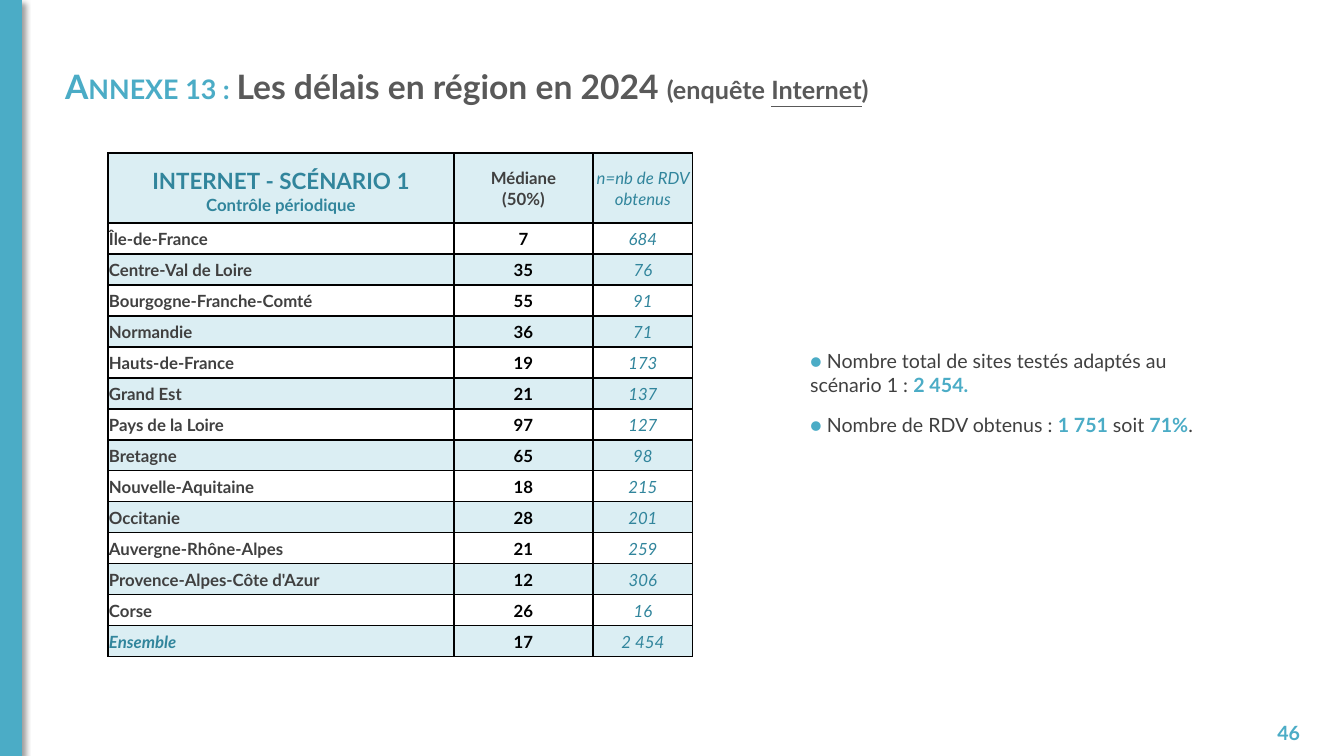
"""Build the slide of regional appointment delays for 2024."""
import dataclasses
import typing

import lxml.etree
import pptx
import pptx.dml.color
import pptx.enum.shapes
import pptx.enum.text
import pptx.oxml
import pptx.oxml.ns
import pptx.util

ALIGN = pptx.enum.text.PP_ALIGN
MIDDLE = pptx.enum.text.MSO_ANCHOR.MIDDLE
NS = 'xmlns:a="http://schemas.openxmlformats.org/drawingml/2006/main"'


@dataclasses.dataclass(frozen=True)
class Theme:
    font: str = "Lato"
    accent: str = "4BACC6"
    teal: str = "31859C"
    head: str = "595959"
    body: str = "404040"
    black: str = "000000"
    title: int = 24
    lead: int = 20
    sub: int = 18
    note: int = 14
    cell: int = 12


THEME = Theme()


@dataclasses.dataclass(frozen=True)
class Box:
    left: int
    top: int
    width: int
    height: int


@dataclasses.dataclass(frozen=True)
class Span:
    text: str
    color: str
    size: typing.Optional[int] = None
    bold: typing.Optional[bool] = None
    under: bool = False
    small: bool = False


@dataclasses.dataclass(frozen=True)
class Line:
    spans: tuple[Span, ...]
    size: int
    bold: bool = False
    italic: bool = False
    align: ALIGN = ALIGN.LEFT
    after: int = 0


@dataclasses.dataclass(frozen=True)
class Region:
    name: str
    median: str
    count: str


WIDE, HIGH = 1344, 756
BAR = Box(0, 0, 22, HIGH)
TITLE = Box(55, 60, 1156, 53)
PAGE = Box(1234, 713, 76, 40)
NOTES = Box(800, 344, 412, 99)
COLS = (346, 139, 100)
HEAD_H, ROW_H = 70, 31

REGIONS = (
    Region("Île-de-France", "7", "684"),
    Region("Centre-Val de Loire", "35", "76"),
    Region("Bourgogne-Franche-Comté", "55", "91"),
    Region("Normandie", "36", "71"),
    Region("Hauts-de-France", "19", "173"),
    Region("Grand Est", "21", "137"),
    Region("Pays de la Loire", "97", "127"),
    Region("Bretagne", "65", "98"),
    Region("Nouvelle-Aquitaine", "18", "215"),
    Region("Occitanie", "28", "201"),
    Region("Auvergne-Rhône-Alpes", "21", "259"),
    Region("Provence-Alpes-Côte d'Azur", "12", "306"),
    Region("Corse", "26", "16"),
    Region("Ensemble", "17", "2 454"),
)
GRID = Box(108, 153, sum(COLS), HEAD_H + ROW_H * len(REGIONS))

HEADING = Line((
    Span("Annexe 13 : ", THEME.accent, small=True),
    Span("Les délais en région en 2024 ", THEME.head),
    Span("(enquête ", THEME.head, THEME.sub),
    Span("Internet", THEME.head, THEME.sub, under=True),
    Span(")", THEME.head, THEME.sub),
), THEME.title, bold=True)

REMARKS = (
    Line((
        Span("●", THEME.accent),
        Span(" Nombre total de sites testés adaptés au scénario 1 : ", THEME.body),
        Span("2 454.", THEME.accent, bold=True),
    ), THEME.note, after=12),
    Line((
        Span("● ", THEME.accent),
        Span("Nombre de RDV obtenus : ", THEME.body),
        Span("1 751 ", THEME.accent, bold=True),
        Span("soit ", THEME.body),
        Span("71%", THEME.accent, bold=True),
        Span(".", THEME.body),
    ), THEME.note, after=12),
)


def px(count: int) -> int:
    return pptx.util.Emu(round(count * 914400 / 100.8))


def rgb(code: str) -> pptx.dml.color.RGBColor:
    return pptx.dml.color.RGBColor.from_string(code)


def place(shape: typing.Any, box: Box) -> None:
    shape.left, shape.top = px(box.left), px(box.top)
    shape.width, shape.height = px(box.width), px(box.height)


def write(frame: typing.Any, lines: typing.Sequence[Line]) -> None:
    frame.word_wrap = True
    for pos, line in enumerate(lines):
        para = frame.add_paragraph() if pos else frame.paragraphs[0]
        para.alignment = line.align
        para.space_before = pptx.util.Pt(0)
        para.space_after = pptx.util.Pt(line.after)
        font = para.font
        font.name, font.size = THEME.font, pptx.util.Pt(line.size)
        font.bold, font.italic = line.bold, line.italic
        for span in line.spans:
            run = para.add_run()
            run.text = span.text
            run.font.color.rgb = rgb(span.color)
            if span.size:
                run.font.size = pptx.util.Pt(span.size)
            if span.bold:
                run.font.bold = True
            if span.under:
                run.font.underline = True
            if span.small:
                run.font._element.set("cap", "small")


def centre(text: str, color: str, bold: bool = True, italic: bool = False) -> Line:
    return Line((Span(text, color),), THEME.cell, bold, italic, ALIGN.CENTER)


def fill_cell(cell: typing.Any, lines: typing.Sequence[Line], tint: bool) -> None:
    cell.vertical_anchor = MIDDLE
    cell.margin_left = cell.margin_right = cell.margin_top = px(1)
    cell.margin_bottom = 0
    write(cell.text_frame, lines)
    props = cell._tc.get_or_add_tcPr()
    if tint:
        cell.fill.solid()
        cell.fill.fore_color.rgb = rgb(THEME.accent)
        color = props.find(".//" + pptx.oxml.ns.qn("a:srgbClr"))
        lxml.etree.SubElement(color, pptx.oxml.ns.qn("a:alpha"), val="20000")
    else:
        cell.fill.background()
    for pos, side in enumerate("LRTB"):
        props.insert(pos, pptx.oxml.parse_xml(
            f'<a:ln{side} {NS} w="12700"><a:solidFill><a:srgbClr val="{THEME.black}"/>'
            f'</a:solidFill></a:ln{side}>'))


def draw_bar(shapes: typing.Any) -> None:
    bar = shapes.add_shape(pptx.enum.shapes.MSO_SHAPE.RECTANGLE, 0, 0, 0, 0)
    place(bar, BAR)
    bar.fill.solid()
    bar.fill.fore_color.rgb = rgb(THEME.accent)
    bar.line.fill.background()
    bar.shadow.inherit = False
    glow = bar._element.spPr.find(pptx.oxml.ns.qn("a:effectLst"))
    glow.append(pptx.oxml.parse_xml(
        f'<a:outerShdw {NS} blurRad="50800" dist="38100" dir="2700000">'
        f'<a:srgbClr val="{THEME.black}"><a:alpha val="40000"/></a:srgbClr></a:outerShdw>'))


def draw_grid(shapes: typing.Any) -> None:
    frame = shapes.add_table(len(REGIONS) + 1, len(COLS), 0, 0, 0, 0)
    place(frame, GRID)
    table = frame.table
    table.first_row = table.horz_banding = False
    for col, width in zip(table.columns, COLS):
        col.width = px(width)
    lead = Span("internet - scénario 1", THEME.teal, small=True)
    rows = [(
        (Line((lead,), THEME.lead, True, align=ALIGN.CENTER),
         centre("Contrôle périodique", THEME.teal)),
        (centre("Médiane", THEME.body), centre("(50%)", THEME.body)),
        (centre("n=nb de RDV obtenus", THEME.teal, False, True),),
    )]
    for item in REGIONS:
        total = item is REGIONS[-1]
        name = Span(item.name, THEME.teal if total else THEME.body)
        rows.append((
            (Line((name,), THEME.cell, True, total),),
            (centre(item.median, THEME.black),),
            (centre(item.count, THEME.teal, False, True),),
        ))
    for pos, row in enumerate(rows):
        table.rows[pos].height = px(ROW_H if pos else HEAD_H)
        for col, lines in enumerate(row):
            fill_cell(table.cell(pos, col), lines, pos % 2 == 0)


def main() -> None:
    deck = pptx.Presentation()
    deck.slide_width, deck.slide_height = px(WIDE), px(HIGH)
    slide = deck.slides.add_slide(deck.slide_layouts[1])
    shapes = slide.shapes
    draw_bar(shapes)
    title, notes = shapes.title, slide.placeholders[1]
    place(title, TITLE)
    title.text_frame.auto_size = pptx.enum.text.MSO_AUTO_SIZE.NONE
    write(title.text_frame, (HEADING,))
    page = shapes.add_textbox(0, 0, 0, 0)
    place(page, PAGE)
    page.text_frame.vertical_anchor = MIDDLE
    write(page.text_frame, (
        Line((Span("46", THEME.accent),), THEME.note, True, align=ALIGN.RIGHT),))
    draw_grid(shapes)
    place(notes, NOTES)
    notes.text_frame.auto_size = pptx.enum.text.MSO_AUTO_SIZE.SHAPE_TO_FIT_TEXT
    write(notes.text_frame, REMARKS)
    for para in notes.text_frame.paragraphs:
        props = para._p.get_or_add_pPr()
        props.set("marL", "0")
        props.set("indent", "0")
        plain = lxml.etree.Element(pptx.oxml.ns.qn("a:buNone"))
        props.find(pptx.oxml.ns.qn("a:defRPr")).addprevious(plain)
    deck.save("out.pptx")


if __name__ == "__main__":
    main()
